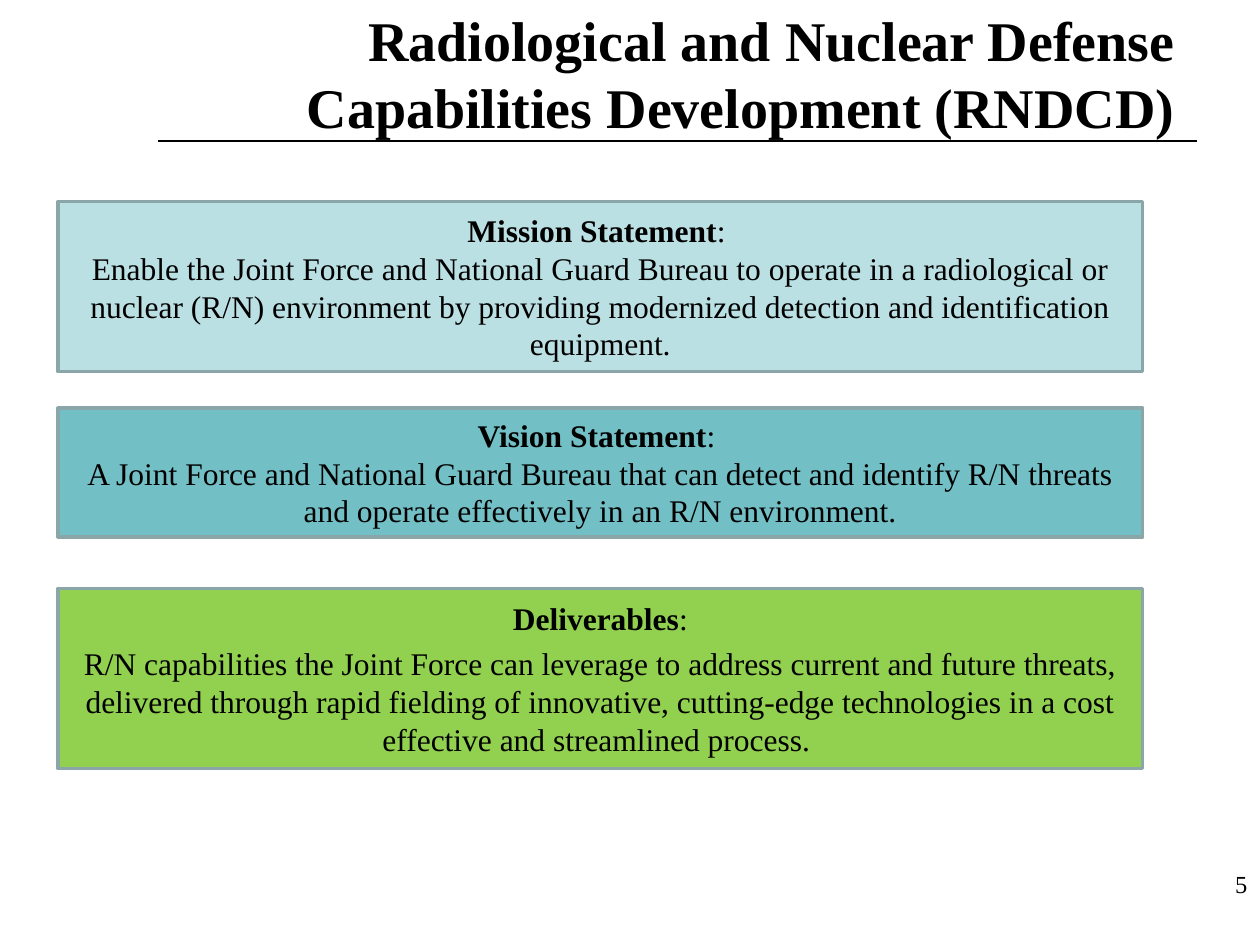
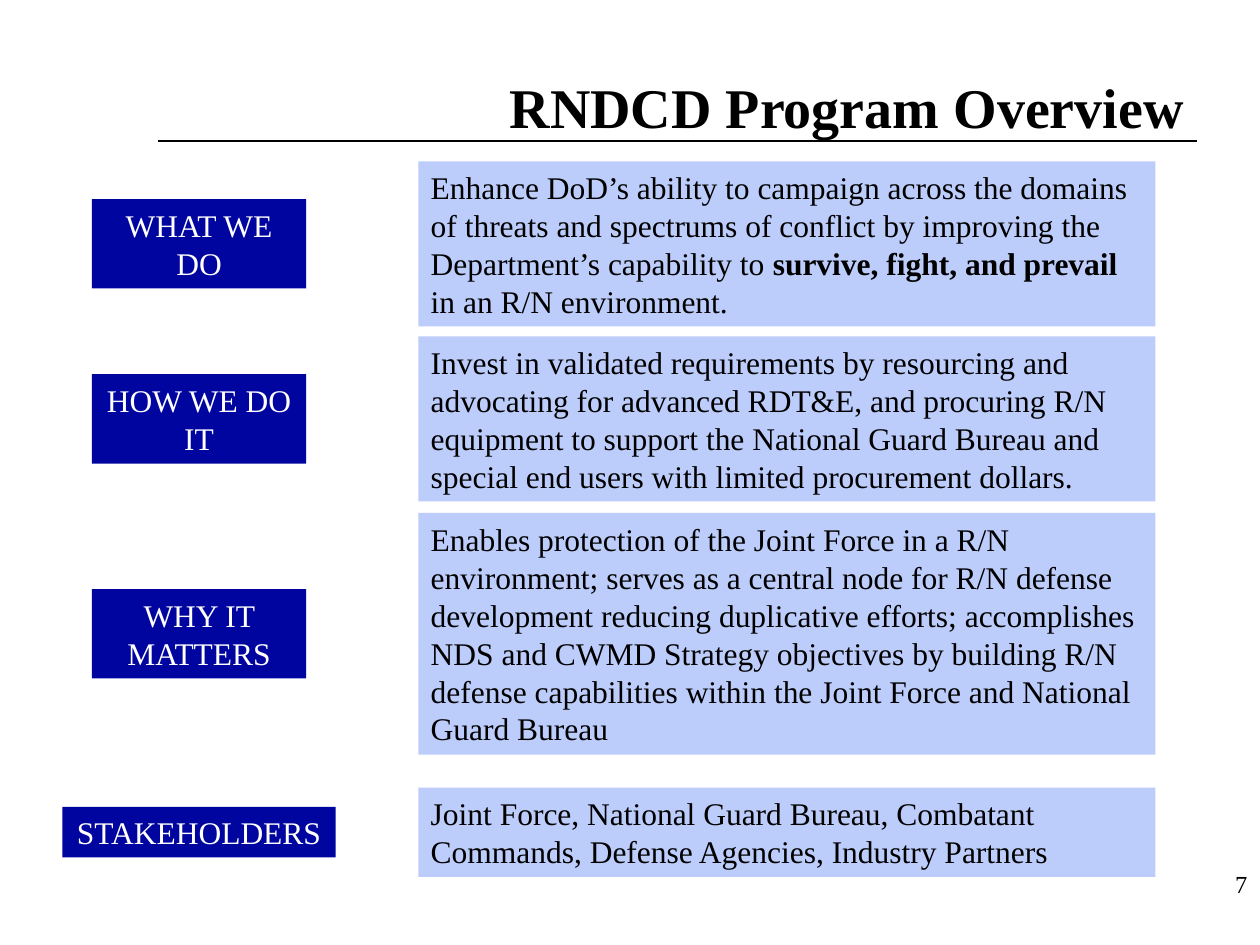
"""Builds the two RNDCD slides: mission statements and program overview."""
from dataclasses import dataclass

from lxml import etree
from pptx import Presentation
from pptx.dml.color import RGBColor
from pptx.enum.shapes import MSO_CONNECTOR as Connector, MSO_SHAPE as Shape
from pptx.enum.text import MSO_ANCHOR as Anchor, MSO_AUTO_SIZE as AutoSize, PP_ALIGN as Align
from pptx.oxml.ns import qn
from pptx.util import Inches, Pt


@dataclass(frozen=True)
class Theme:
    font: str = "Times New Roman"
    ink: str = "000000"
    paper: str = "FFFFFF"
    mission: str = "BBE0E3"
    vision: str = "72BFC5"
    deliverables: str = "92D050"
    border: str = "8AA6A8"
    label: str = "00059F"
    detail: str = "BDCDFB"
    title_size: int = 32
    body_size: int = 18
    number_size: int = 14
    border_width: float = 2
    rule_width: float = 1.25


class Deck:
    def __init__(self, theme):
        self.theme = theme
        self.prs = Presentation()
        self.prs.slide_width, self.prs.slide_height = Inches(10), Inches(7.5)
        self.slide = None

    def start(self, title, number, left, width):
        self.slide = self.prs.slides.add_slide(self.prs.slide_layouts[5])
        self.rule()
        heading = self.slide.shapes.title
        heading.left, heading.top = Inches(left), Inches(-0.03)
        heading.width, heading.height = Inches(width), Inches(1.19)
        self.set_text(heading.text_frame, [[(title, True)]], self.theme.title_size,
                      Align.RIGHT, Anchor.BOTTOM)
        footer = self.slide.shapes.add_textbox(
            Inches(7.67), Inches(6.85), Inches(2.33), Inches(0.52))
        self.set_text(footer.text_frame, [[(number, False)]], self.theme.number_size, Align.RIGHT)

    def rule(self):
        line = self.slide.shapes.add_connector(
            Connector.STRAIGHT, Inches(9.5), Inches(1.12), Inches(1.25), Inches(1.12))
        line.line.color.rgb = RGBColor.from_string(self.theme.ink)
        line.line.width = Pt(self.theme.rule_width)
        etree.SubElement(line._element.spPr, qn("a:effectLst"))

    def panel(self, left, top, width, height, fill, paragraphs,
              border=None, color=None, align=Align.CENTER, gap=0):
        box = self.slide.shapes.add_shape(
            Shape.RECTANGLE, Inches(left), Inches(top), Inches(width), Inches(height))
        box.shadow.inherit = False
        box.fill.solid()
        box.fill.fore_color.rgb = RGBColor.from_string(fill)
        if border:
            box.line.color.rgb = RGBColor.from_string(border)
            box.line.width = Pt(self.theme.border_width)
        else:
            box.line.fill.background()
        self.set_text(box.text_frame, paragraphs, self.theme.body_size, align,
                      Anchor.MIDDLE, color, gap)

    def set_text(self, frame, paragraphs, size, align, anchor=Anchor.TOP, color=None, gap=0):
        frame.word_wrap = True
        frame.auto_size = AutoSize.NONE
        frame.vertical_anchor = anchor
        for index, runs in enumerate(paragraphs):
            paragraph = frame.add_paragraph() if index else frame.paragraphs[0]
            paragraph.alignment = align
            paragraph.space_after = Pt(gap)
            for text, bold in runs:
                run = paragraph.add_run()
                run.text = text
                run.font.name = self.theme.font
                run.font.size = Pt(size)
                run.font.bold = bold
                run.font.color.rgb = RGBColor.from_string(color or self.theme.ink)


def add_statements(deck):
    theme = deck.theme
    deck.start("Radiological and Nuclear Defense Capabilities Development (RNDCD)", "5", 1.86, 7.57)
    statements = [
        (1.6, 1.35, theme.mission, 0, "Mission Statement", ": ",
         "Enable the Joint Force and National Guard Bureau to operate in a radiological or "
         "nuclear (R/N) environment by providing modernized detection and identification "
         "equipment."),
        (3.24, 1.02, theme.vision, 0, "Vision Statement", ": ",
         "A Joint Force and National Guard Bureau that can detect and identify R/N threats "
         "and operate effectively in an R/N environment."),
        (4.67, 1.43, theme.deliverables, 4, "Deliverables", ":",
         "R/N capabilities the Joint Force can leverage to address current and future threats, "
         "delivered through rapid fielding of innovative, cutting-edge technologies in a cost "
         "effective and streamlined process. "),
    ]
    for top, height, fill, gap, name, colon, body in statements:
        deck.panel(0.46, top, 8.61, height, fill,
                   [[(name, True), (colon, False)], [(body, False)]],
                   border=theme.border, gap=gap)


def add_overview(deck):
    theme = deck.theme
    deck.start("RNDCD Program Overview", "7", 0.5, 9)
    label_center = 1.58
    topics = [
        ("WHAT WE DO", 1.7, 0.71, 1.28, 1.31, [
            ("Enhance DoD’s ability to campaign across the domains of threats and spectrums of "
             "conflict by improving the Department’s capability to ", False),
            ("survive, fight, and prevail ", True),
            ("in an R/N environment.", False)]),
        ("HOW WE DO IT", 1.7, 0.71, 2.67, 1.31, [
            ("Invest in validated requirements by resourcing and advocating for advanced RDT&E, "
             "and procuring R/N equipment to support the National Guard Bureau and special end "
             "users with limited procurement dollars.", False)]),
        ("WHY IT MATTERS", 1.7, 0.71, 4.07, 1.92, [
            ("Enables protection of the Joint Force in a R/N environment; serves as a central "
             "node for R/N defense development reducing duplicative efforts; accomplishes NDS "
             "and CWMD Strategy objectives by building R/N defense capabilities within the "
             "Joint Force and National Guard Bureau", False)]),
        ("STAKEHOLDERS", 2.17, 0.4, 6.25, 0.71, [
            ("Joint Force, National Guard Bureau, Combatant Commands, Defense Agencies, "
             "Industry Partners", False)]),
    ]
    for label, label_width, label_height, top, height, detail in topics:
        deck.panel(label_center - label_width / 2, top + (height - label_height) / 2,
                   label_width, label_height, theme.label, [[(label, False)]],
                   color=theme.paper)
        deck.panel(3.32, top, 5.85, height, theme.detail, [detail], align=Align.LEFT)


def main():
    deck = Deck(Theme())
    add_statements(deck)
    add_overview(deck)
    deck.prs.save("out.pptx")


if __name__ == "__main__":
    main()
